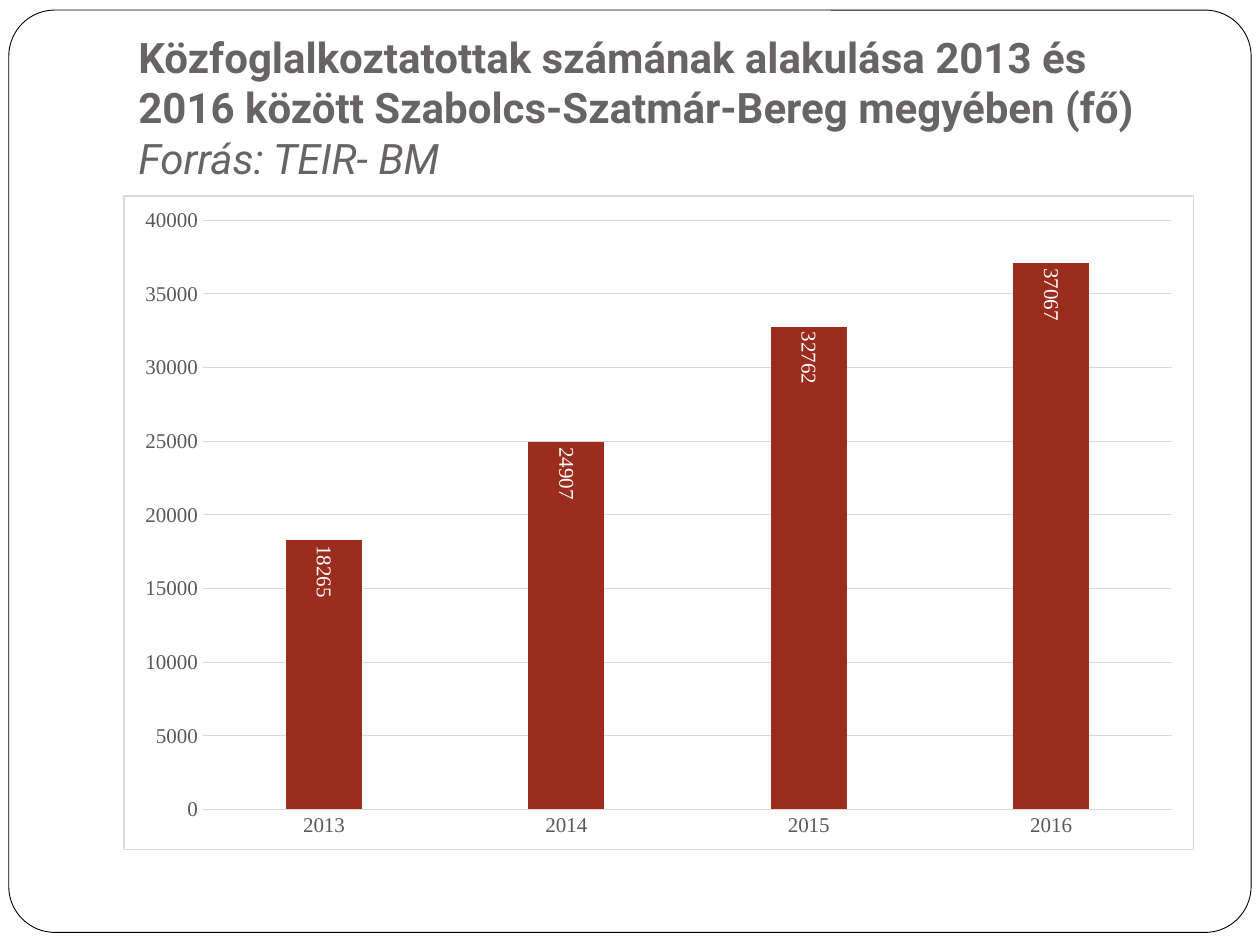
"""Builds a slide with a column chart of public workers in one county."""
from dataclasses import dataclass

from lxml import etree
from pptx import Presentation
from pptx.chart.data import CategoryChartData
from pptx.dml.color import RGBColor
from pptx.enum.chart import XL_CHART_TYPE, XL_LABEL_POSITION, XL_TICK_MARK
from pptx.enum.shapes import MSO_SHAPE
from pptx.enum.text import MSO_ANCHOR
from pptx.oxml import parse_xml
from pptx.oxml.ns import nsdecls
from pptx.util import Emu, Pt

COLUMNS = XL_CHART_TYPE.COLUMN_CLUSTERED
INSIDE_END = XL_LABEL_POSITION.INSIDE_END
NO_TICK = XL_TICK_MARK.NONE
ROUNDED = MSO_SHAPE.ROUNDED_RECTANGLE
BOTTOM = MSO_ANCHOR.BOTTOM

EMU_PER_PX = 9144
BLANK_LAYOUT = 6
QUARTER_TURN = "5400000"

YEARS = ("2013", "2014", "2015", "2016")
WORKERS = (18265, 24907, 32762, 37067)
HEADING = "Közfoglalkoztatottak számának alakulása 2013 és 2016 között Szabolcs-Szatmár-Bereg megyében (fő)"
SOURCE = "Forrás: TEIR- BM"


@dataclass(frozen=True)
class Theme:
    """Colours, fonts and sizes of the slide."""

    paper: str = "FFFFFF"
    frame: str = "000000"
    title: str = "696464"
    axis: str = "595959"
    rule: str = "D9D9D9"
    column: str = "9B2D1F"
    title_font: str = "Roboto"
    chart_font: str = "Times New Roman"
    title_size: int = 24
    chart_size: int = 12
    frame_width: float = 0.5
    rule_width: float = 0.75


THEME = Theme()


def px(*lengths):
    """Turn whole pixels into EMU."""
    return [Emu(length * EMU_PER_PX) for length in lengths]


def set_fill(item, color):
    """Give an item a solid fill."""
    item.fill.solid()
    item.fill.fore_color.rgb = RGBColor.from_string(color)


def set_line(line, color, width):
    """Give a line its colour and width."""
    line.color.rgb = RGBColor.from_string(color)
    line.width = Pt(width)


def set_font(font, name, size, color):
    """Give a font its face, size and colour."""
    font.name = name
    font.size = Pt(size)
    font.color.rgb = RGBColor.from_string(color)


def add_frame(page, bounds):
    """Add the rounded frame around the page."""
    frame = page.shapes.add_shape(ROUNDED, *px(*bounds))
    frame.adjustments[0] = 0.05
    frame.shadow.inherit = False
    set_fill(frame, THEME.paper)
    set_line(frame.line, THEME.frame, THEME.frame_width)


def add_span(para, text, bold=False, italic=False):
    """Add one run of title text."""
    span = para.add_run()
    span.text = text
    set_font(span.font, THEME.title_font, THEME.title_size, THEME.title)
    span.font.bold = bold
    span.font.italic = italic


def add_title(page, bounds):
    """Add the heading with its source line."""
    box = page.shapes.add_textbox(*px(*bounds)).text_frame
    box.word_wrap = True
    box.vertical_anchor = BOTTOM
    box.margin_left, box.margin_top, box.margin_right, box.margin_bottom = px(10, 5, 10, 10)
    para = box.paragraphs[0]
    add_span(para, HEADING, bold=True)
    para.add_line_break()
    add_span(para, SOURCE, italic=True)


def style_axes(chart):
    """Style both axes and the gridlines."""
    for axis in (chart.category_axis, chart.value_axis):
        axis.major_tick_mark = axis.minor_tick_mark = NO_TICK
        set_font(axis.tick_labels.font, THEME.chart_font, THEME.chart_size, THEME.axis)
    set_line(chart.category_axis.format.line, THEME.rule, THEME.rule_width)
    values = chart.value_axis
    values.minimum_scale, values.maximum_scale, values.major_unit = 0, 40000, 5000
    values.tick_labels.number_format = "0"
    values.tick_labels.number_format_is_linked = False
    values.format.line.fill.background()
    set_line(values.major_gridlines.format.line, THEME.rule, THEME.rule_width)


def style_labels(series):
    """Show turned values inside the column ends."""
    labels = series.data_labels
    labels.show_value = True
    labels.position = INSIDE_END
    set_font(labels.font, THEME.chart_font, THEME.chart_size, THEME.paper)
    body = series._element.xpath("c:dLbls/c:txPr/a:bodyPr")[0]
    body.set("rot", QUARTER_TURN)
    body.set("vert", "horz")


def style_area(chart):
    """Fill and outline the chart area."""
    area = parse_xml(f"<c:spPr {nsdecls('c', 'a')}/>")
    drawing = area.nsmap["a"]
    fill = etree.SubElement(area, f"{{{drawing}}}solidFill")
    outline = etree.SubElement(area, f"{{{drawing}}}ln", w=str(Pt(THEME.rule_width)))
    outline_fill = etree.SubElement(outline, f"{{{drawing}}}solidFill")
    for parent, color in ((fill, THEME.paper), (outline_fill, THEME.rule)):
        etree.SubElement(parent, f"{{{drawing}}}srgbClr", val=color)
    chart.element.xpath("c:chart")[0].addnext(area)


def add_worker_chart(page, bounds):
    """Add the column chart of workers by year."""
    data = CategoryChartData(number_format="0")
    data.categories = YEARS
    data.add_series("Series 1", WORKERS)
    chart = page.shapes.add_chart(COLUMNS, *px(*bounds), data).chart
    chart.has_legend = False
    chart.has_title = False
    set_font(chart.font, THEME.chart_font, THEME.chart_size, THEME.axis)
    plot = chart.plots[0]
    plot.gap_width = 219
    plot.overlap = -27
    plot.vary_by_categories = False
    set_fill(plot.series[0].format, THEME.column)
    style_labels(plot.series[0])
    style_axes(chart)
    style_area(chart)


def main():
    """Build and save the deck."""
    deck = Presentation()
    deck.slide_width, deck.slide_height = px(1000, 750)
    page = deck.slides.add_slide(deck.slide_layouts[BLANK_LAYOUT])
    set_fill(page.background, THEME.paper)
    add_frame(page, (7, 8, 986, 732))
    add_title(page, (100, 30, 850, 125))
    add_worker_chart(page, (98, 155, 850, 520))
    deck.save("out.pptx")


if __name__ == "__main__":
    main()
